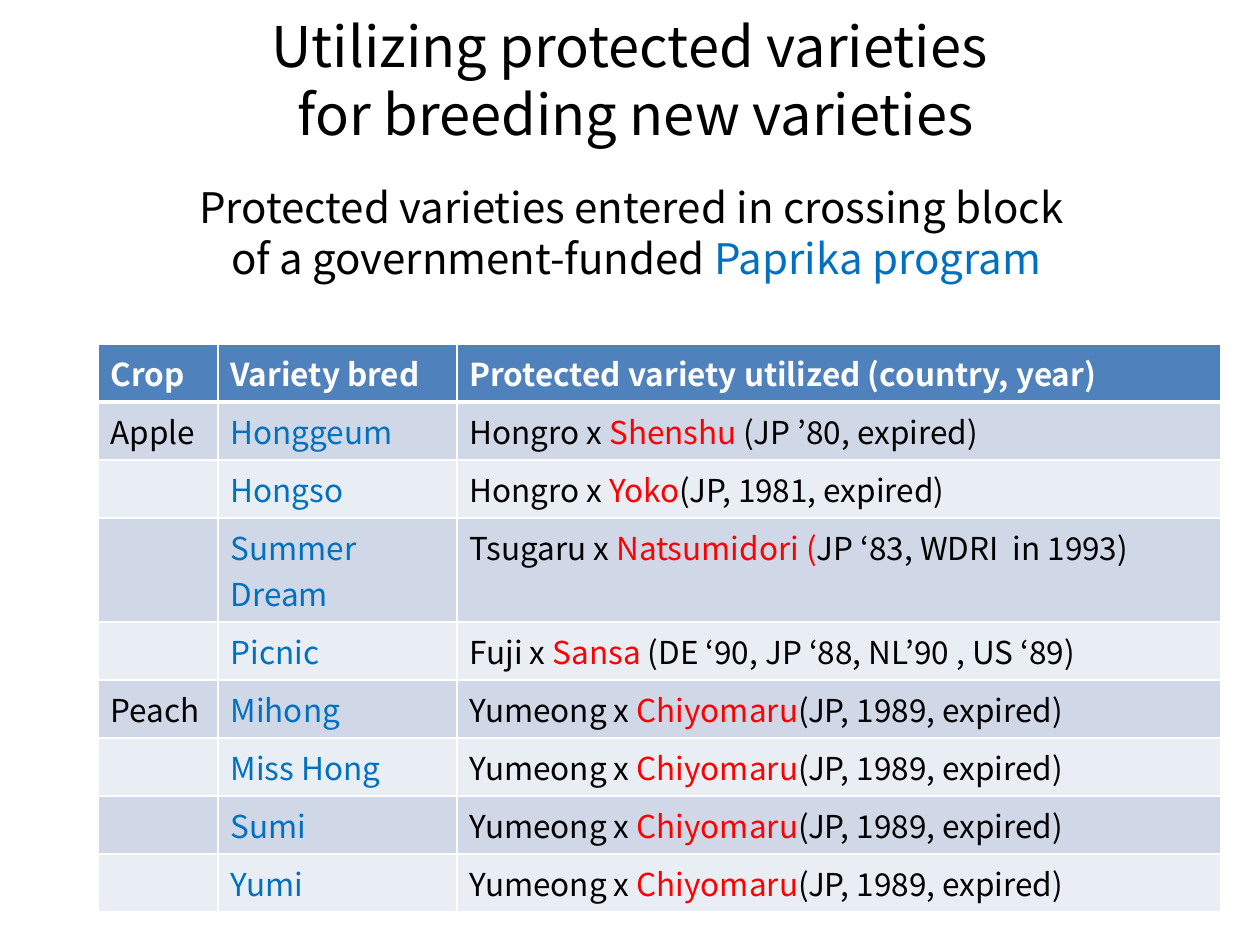
from pptx import Presentation
from pptx.dml.color import RGBColor
from pptx.enum.text import MSO_ANCHOR, PP_ALIGN
from pptx.oxml import parse_xml
from pptx.oxml.ns import nsdecls
from pptx.util import Emu, Pt

PX = 914400 // 126
FONT = "Noto Sans CJK KR"
BLACK, WHITE, BLUE, RED = "000000", "FFFFFF", "0070C0", "FF0000"
HEADER_FILL, BANDS = "4F81BD", ("D0D8E8", "E9EDF4")

HEADERS = ("Crop", "Variety bred", "Protected variety utilized (country, year)")
CHIYOMARU = ("Yumeong x ", "Chiyomaru", "(JP, 1989, expired)")
VARIETIES = [
    ("Apple", "Honggeum", ("Hongro x ", "Shenshu ", "(JP ’80, expired)")),
    ("", "Hongso", ("Hongro x ", "Yoko", "(JP, 1981, expired)")),
    ("", "Summer Dream", ("Tsugaru x ", "Natsumidori (", "JP ‘83, WDRI  in 1993)")),
    ("", "Picnic", ("Fuji x ", "Sansa ", "(DE ‘90, JP ‘88, NL’90 , US ‘89)")),
    ("Peach", "Mihong", CHIYOMARU),
    ("", "Miss Hong", CHIYOMARU),
    ("", "Sumi", CHIYOMARU),
    ("", "Yumi", CHIYOMARU),
]
TWO_LINE_ROW = 3


def px(n):
    return Emu(n * PX)


def rgb(value):
    return RGBColor.from_string(value)


def add_runs(p, parts, size, bold=False):
    """Fill a paragraph with (text, colour) parts."""
    for text, color in parts:
        r = p.add_run()
        r.text = text
        r.font.name = FONT
        r.font.size = Pt(size)
        r.font.bold = bold
        r.font.color.rgb = rgb(color)


def add_heading(s, box, lines, size):
    """Place centred lines, each a list of (text, colour) parts."""
    tf = s.shapes.add_textbox(*map(px, box)).text_frame
    tf.word_wrap = True
    tf.vertical_anchor = MSO_ANCHOR.MIDDLE
    for i, parts in enumerate(lines):
        p = tf.paragraphs[0] if i == 0 else tf.add_paragraph()
        p.alignment = PP_ALIGN.CENTER
        add_runs(p, parts, size)


def set_borders(cell, top, bottom):
    """Draw white borders; the side ones are 1 pt wide."""
    tcPr = cell._tc.get_or_add_tcPr()
    widths = (("lnL", 1), ("lnR", 1), ("lnT", top), ("lnB", bottom))
    for i, (tag, width) in enumerate(widths):
        tcPr.insert(i, parse_xml(
            f'<a:{tag} {nsdecls("a")} w="{Pt(width)}"><a:solidFill>'
            f'<a:srgbClr val="{WHITE}"/></a:solidFill></a:{tag}>'))


def add_variety_table(s, left, top, col_widths, row_height, tall_height):
    rows = [[[(text, WHITE)] for text in HEADERS]]
    for crop, bred, cross in VARIETIES:
        rows.append([[(crop, BLACK)] if crop else [], [(bred, BLUE)],
                     list(zip(cross, (BLACK, RED, BLACK)))])
    heights = [tall_height if i == TWO_LINE_ROW else row_height
               for i in range(len(rows))]
    table = s.shapes.add_table(
        len(rows), len(col_widths), px(left), px(top),
        px(sum(col_widths)), px(sum(heights))).table
    for col, width in zip(table.columns, col_widths):
        col.width = px(width)
    for i, row in enumerate(rows):
        table.rows[i].height = px(heights[i])
        for j, parts in enumerate(row):
            cell = table.cell(i, j)
            cell.fill.solid()
            cell.fill.fore_color.rgb = rgb(BANDS[(i - 1) % 2] if i else HEADER_FILL)
            set_borders(cell, top=3 if i == 1 else 1, bottom=3 if i == 0 else 1)
            add_runs(cell.text_frame.paragraphs[0], parts, 18, bold=i == 0)


def main():
    prs = Presentation()
    prs.slide_width, prs.slide_height = px(1260), px(945)
    s = prs.slides.add_slide(prs.slide_layouts[6])
    add_heading(s, (69, 0, 1134, 158),
                [[("Utilizing protected varieties ", BLACK)],
                 [("for breeding new varieties", BLACK)]], 32)
    add_heading(s, (69, 178, 1134, 108),
                [[("Protected varieties entered in crossing block ", BLACK)],
                 [("of a government-funded ", BLACK), ("Paprika program", BLUE)]], 24)
    add_variety_table(s, 98, 344, (120, 239, 764), 58, 104)
    prs.save("out.pptx")


if __name__ == "__main__":
    main()
